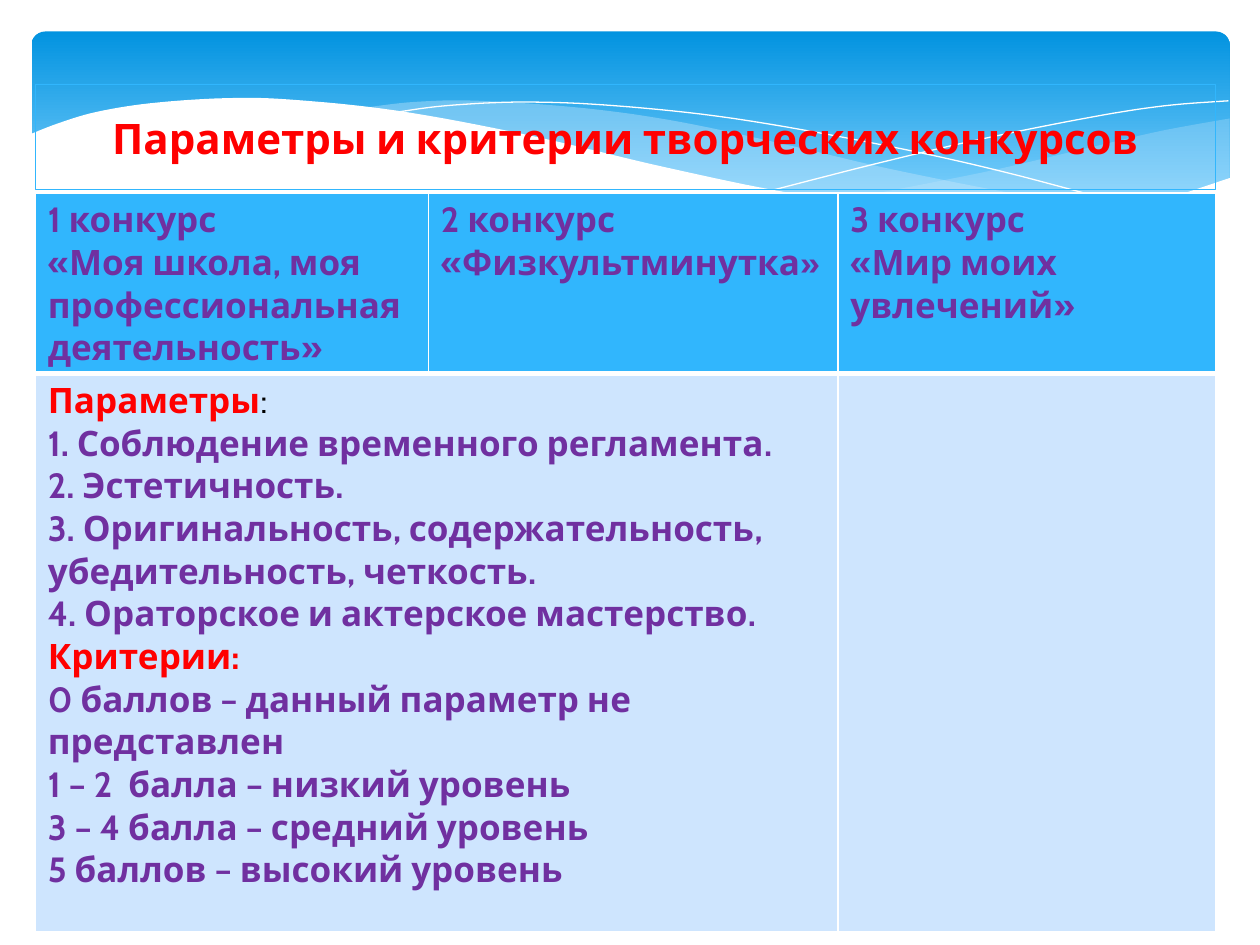
from lxml import etree
from pptx import Presentation
from pptx.dml.color import RGBColor
from pptx.enum.shapes import MSO_SHAPE as SHAPE
from pptx.enum.text import MSO_ANCHOR as ANCHOR, MSO_AUTO_SIZE as FIT, PP_ALIGN as ALIGN
from pptx.oxml.ns import qn
from pptx.util import Inches, Pt

WHITE = RGBColor(0xFF, 0xFF, 0xFF)
BLACK = RGBColor(0, 0, 0)
RED = RGBColor(0xFF, 0, 0)
PURPLE = RGBColor(0x70, 0x30, 0xA0)
BLUE = RGBColor(0x31, 0xB6, 0xFD)
PALE = RGBColor(0xCE, 0xE5, 0xFE)
MIST = RGBColor(0xC6, 0xE7, 0xFC)
SKY_TOP = RGBColor(0x02, 0x93, 0xE0)
SKY_BOTTOM = RGBColor(0x83, 0xD3, 0xFE)

FONT = "Cabin"
COLS, ROWS = 100, 75  # square grid, a tenth of an inch per step


def add_text(p, text, size=20, color=PURPLE, bold=True):
    """Add one formatted run to a paragraph."""
    r = p.add_run()
    r.text = text
    r.font.name, r.font.size, r.font.bold = FONT, Pt(size), bold
    r.font.color.rgb = color


def smooth(points, steps=8):
    """Points of a Catmull-Rom curve that passes through the given points."""
    pts = [points[0], *points, points[-1]]
    curve = [points[0]]
    for a, b, c, d in zip(pts, pts[1:], pts[2:], pts[3:]):
        for i in range(1, steps + 1):
            t = i / steps
            curve.append(tuple(
                (2 * q + (r - p) * t + (2 * p - 5 * q + 4 * r - s) * t ** 2
                 + (3 * q - p - 3 * r + s) * t ** 3) / 2
                for p, q, r, s in zip(a, b, c, d)))
    return curve


class SlideBuilder:
    def __init__(self, prs):
        self.prs = prs
        self.slide = prs.slides.add_slide(prs.slide_layouts[5])
        self.shapes = self.slide.shapes

    def x(self, cols):
        return round(self.prs.slide_width * cols / COLS)

    def y(self, rows):
        return round(self.prs.slide_height * rows / ROWS)

    def box(self, left, top, width, height):
        return self.x(left), self.y(top), self.x(width), self.y(height)

    def banner(self, *place):
        s = self.shapes.add_shape(SHAPE.ROUNDED_RECTANGLE, *self.box(*place))
        s.adjustments[0] = 0.07
        s.shadow.inherit = False
        s.line.fill.background()
        s.fill.gradient()
        s.fill.gradient_angle = 270
        stops = zip(s.fill.gradient_stops, (SKY_TOP, SKY_BOTTOM), (0, 0.9))
        for stop, color, position in stops:
            stop.color.rgb, stop.position = color, position

    def wave(self, points, fill=None, opacity=100):
        """A closed filled wave, or an open white line when there is no fill."""
        (x0, y0), *rest = [(self.x(a), self.y(b)) for a, b in points]
        builder = self.shapes.build_freeform(x0, y0)
        builder.add_line_segments(rest, close=fill is not None)
        s = builder.convert_to_shape()
        s.shadow.inherit = False
        if fill is None:
            s.fill.background()
            s.line.color.rgb, s.line.width = WHITE, Pt(0)
            return
        s.line.fill.background()
        s.fill.solid()
        s.fill.fore_color.rgb = fill
        if opacity < 100:
            color = s._element.spPr.find(".//" + qn("a:srgbClr"))
            etree.SubElement(color, qn("a:alpha"), val=str(opacity * 1000))

    def title(self, text, *place):
        sp = self.shapes.title
        self.shapes._spTree.append(sp._element)  # in front of the waves
        sp.left, sp.top, sp.width, sp.height = self.box(*place)
        sp.line.color.rgb, sp.line.width = BLUE, Pt(0.75)
        tf = sp.text_frame
        tf.word_wrap, tf.auto_size = True, FIT.SHAPE_TO_FIT_TEXT
        tf.vertical_anchor = ANCHOR.MIDDLE
        p = tf.paragraphs[0]
        p.alignment = ALIGN.CENTER
        add_text(p, text, size=24, color=RED)

    def table(self, left, top, widths, heights):
        place = self.box(left, top, sum(widths), sum(heights))
        table = self.shapes.add_table(len(heights), len(widths), *place).table
        table.horz_banding = False
        for col, width in zip(table.columns, widths):
            col.width = self.x(width)
        for row, height in zip(table.rows, heights):
            row.height = self.y(height)
        return table

    def cell(self, cell, fill, paragraphs=(), **borders):
        """Fill a cell; each paragraph is a list of (text, format) runs."""
        cell.fill.solid()
        cell.fill.fore_color.rgb = fill
        tcPr = cell._tc.get_or_add_tcPr()
        for i, side in enumerate("LRTB"):
            ln = etree.Element(qn("a:ln" + side), w=str(Pt(borders.get(side, 1))))
            solid = etree.SubElement(ln, qn("a:solidFill"))
            etree.SubElement(solid, qn("a:srgbClr"), val=str(WHITE))
            tcPr.insert(i, ln)
        tf = cell.text_frame
        for i, runs in enumerate(paragraphs):
            p = tf.add_paragraph() if i else tf.paragraphs[0]
            for text, style in runs:
                add_text(p, text, **style)


HEADERS = [
    [[("1 конкурс", {})],
     [("«Моя школа, моя профессиональная деятельность»", {})]],
    [[("2 конкурс", {})],
     [("«Физкультминутка", {}), ("»", {"size": 18})]],
    [[("3 конкурс", {})],
     [("«Мир моих увлечений»", {})]],
]
CRITERIA = [
    [("Параметры", {"color": RED}), (":", {"color": BLACK, "bold": False})],
    [("1. Соблюдение временного регламента.", {})],
    [("2. Эстетичность.", {})],
    [("3. Оригинальность, содержательность, убедительность, четкость.", {})],
    [("4. Ораторское и актерское мастерство.", {})],
    [("Критерии:", {"color": RED})],
    [("0 баллов – данный параметр не представлен", {})],
    [("1 – 2  балла – низкий уровень", {})],
    [("3 – 4 балла – средний уровень", {})],
    [("5 баллов – высокий уровень", {})],
]

# Key points of the waves, in grid steps
RIGHT_WAVE = (
    smooth([(97.6, 9.4), (92.1, 10.4), (86.1, 11.8), (77.9, 13.7), (66.1, 16)])
    + smooth([(66.1, 16), (73.2, 16.8), (81.4, 17.2), (88.1, 16.7),
              (93.5, 15.6), (97.6, 14.1)]))
MIDDLE_WAVE = (
    smooth([(89.3, 16.7), (80.7, 15.4), (70.6, 13.4), (62.9, 11.6), (54.1, 9.7),
            (46.5, 8.6), (38, 8), (32.8, 8.1), (28.6, 8.6)])
    + smooth([(28.6, 8.6), (36.2, 9.7), (44.9, 11.6), (56.6, 14.3), (66.5, 16.1),
              (76.1, 17.1), (83.8, 17.2), (89.3, 16.7)]))
FALLING_LINE = smooth([(30.9, 9), (35.3, 8.4), (41.6, 8.1), (48.9, 8.4),
                       (58.2, 9.4), (69.5, 11.4), (79.5, 13.6), (90.7, 16.6)])
RISING_LINE = smooth([(61.3, 15.1), (69.5, 13), (77.6, 11.1), (86.6, 9.3),
                      (92.4, 8.4), (97.5, 8)])
WHITE_WAVE = (
    smooth([(97.7, 14.1), (92, 15.9), (86.3, 16.9), (80.9, 17.1), (72.6, 16.7),
            (62.6, 15.3), (52.9, 13.3), (41.8, 10.7), (31.6, 8.8), (23, 7.9),
            (17.7, 7.8), (11.9, 8.2), (7.6, 8.9), (4.6, 9.8), (2.3, 10.7)])
    + [(2.3, 22.4), (97.7, 22.4)])


def main():
    prs = Presentation()
    prs.slide_width, prs.slide_height = Inches(10), Inches(7.5)
    b = SlideBuilder(prs)

    # Backdrop
    b.banner(2.5, 2.5, 95.1, 15.6)
    b.wave(RIGHT_WAVE, MIST, opacity=29)
    b.wave(MIDDLE_WAVE, MIST, opacity=40)
    b.wave(FALLING_LINE)
    b.wave(RISING_LINE)
    b.wave(WHITE_WAVE, WHITE)

    # Title
    b.title("Параметры и критерии творческих конкурсов", 2.8, 8.4, 93.7, 5)

    # Contests, with the criteria under the first two
    table = b.table(2.8, 15.3, (31.2, 32.5, 30), (14.3, 44.3))
    for i, header in enumerate(HEADERS):
        b.cell(table.cell(0, i), BLUE, header, B=3)
        b.cell(table.cell(1, i), PALE, () if i else CRITERIA, T=3)
    table.cell(1, 0).merge(table.cell(1, 1))

    prs.save("out.pptx")


if __name__ == "__main__":
    main()
